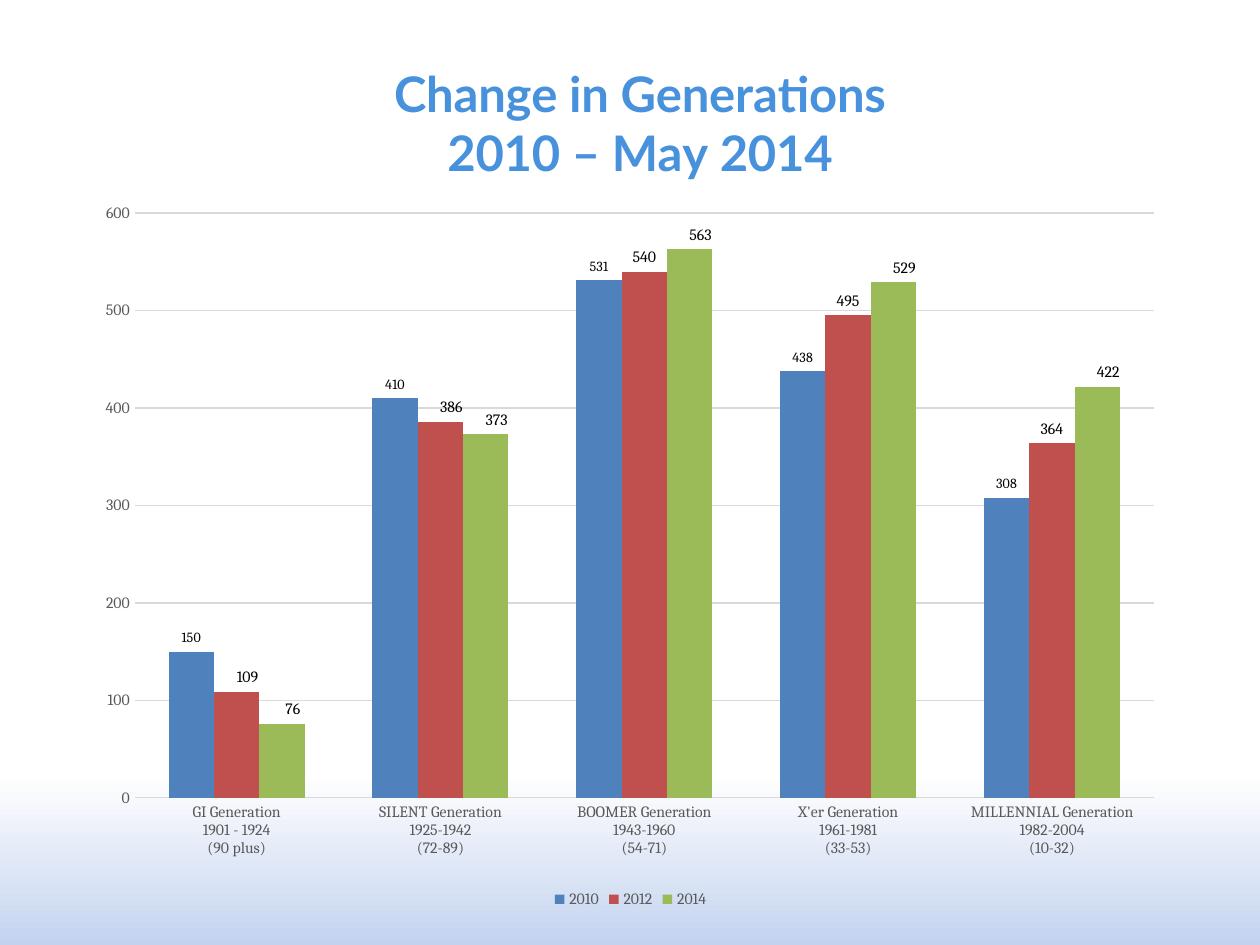
from lxml import etree
from pptx import Presentation
from pptx.chart.data import CategoryChartData
from pptx.dml.color import RGBColor
from pptx.enum.chart import XL_CHART_TYPE, XL_LABEL_POSITION, XL_LEGEND_POSITION, XL_TICK_MARK
from pptx.oxml import parse_xml
from pptx.oxml.ns import qn
from pptx.util import Inches, Pt

COLUMNS = XL_CHART_TYPE.COLUMN_CLUSTERED
BOTTOM = XL_LEGEND_POSITION.BOTTOM
OUTSIDE = XL_LABEL_POSITION.OUTSIDE_END
NO_TICK = XL_TICK_MARK.NONE
CHART_NS = "http://schemas.openxmlformats.org/drawingml/2006/chart"

TITLE = ["Change in Generations", "2010 – May 2014"]
GENERATIONS = [
    "GI Generation\n1901 - 1924\n(90 plus)",
    "SILENT Generation\n1925-1942\n(72-89)",
    "BOOMER Generation\n1943-1960\n(54-71)",
    "X'er Generation\n1961-1981\n(33-53)",
    "MILLENNIAL Generation\n1982-2004\n(10-32)",
]
# name, values, colour, label size, sideways label shifts by point
YEARS = [
    ("2010", [150, 410, 531, 438, 308], "4F81BD", 8, []),
    ("2012", [109, 386, 540, 495, 364], "C0504D", 9, [0.01, 0.01]),
    ("2014", [76, 373, 563, 529, 422], "9BBB59", 9, [0.01, 0.01, 0.01, 0.01, 0.01]),
]


def rgb(color):
    """Return a colour from a hex string."""
    return RGBColor.from_string(color)


def set_font(font, size, color, name="Cambria", bold=False):
    """Set size, colour, face and weight of a font."""
    font.size, font.name, font.bold = Pt(size), name, bold
    font.color.rgb = rgb(color)


def layout_xml(inner=False, edge=True, **lengths):
    """Return a manual chart layout, with lengths as fractions of the chart."""
    tags = '<c:layoutTarget val="inner"/>' if inner else ""
    if edge:
        tags += '<c:xMode val="edge"/><c:yMode val="edge"/>'
    tags += "".join(f'<c:{key} val="{value}"/>' for key, value in lengths.items())
    return parse_xml(
        f'<c:layout xmlns:c="{CHART_NS}"><c:manualLayout>{tags}</c:manualLayout></c:layout>'
    )


def set_background(slide):
    """Fill the background with blue fading upwards to white."""
    fill = slide.background.fill
    fill.gradient()
    fill.gradient_angle = 90
    for stop, (position, color) in zip(fill.gradient_stops, [(0, "C3D3EF"), (0.18, "FFFFFF")]):
        stop.position = position
        stop.color.rgb = rgb(color)
    white = slide.element.xpath(".//p:bgPr//a:gs/a:srgbClr")[-1]
    etree.SubElement(white, qn("a:alpha")).set("val", "67000")


def add_title(chart):
    """Write the two title lines above the columns."""
    tf = chart.chart_title.text_frame
    tf.text = "\n".join(TITLE)
    for p in tf.paragraphs:
        set_font(p.font, 28, "4891DC", "Lato", True)
    title = chart.element.xpath("c:chart/c:title")[0]
    for old in title.findall(qn("c:layout")):
        title.remove(old)
    title.find(qn("c:tx")).addnext(layout_xml(x=0.28, y=0.03))
    chart.chart_title.include_in_layout = False


def format_axis(axis):
    """Give an axis grey labels without line or ticks."""
    axis.major_tick_mark = axis.minor_tick_mark = NO_TICK
    axis.format.line.fill.background()
    set_font(axis.tick_labels.font, 9, "595959")


def format_series(series, color, size, shifts):
    """Colour a series and label its columns."""
    series.format.fill.solid()
    series.format.fill.fore_color.rgb = rgb(color)
    series.invert_if_negative = False
    labels = series.data_labels
    labels.show_value = True
    labels.position = OUTSIDE
    set_font(labels.font, size, "000000")
    for i, _ in enumerate(shifts):
        label = series.points[i].data_label
        set_font(label.font, size, "000000")
        label.position = OUTSIDE


def add_chart(slide):
    """Add the column chart of generations by year."""
    data = CategoryChartData()
    data.categories = GENERATIONS
    for name, values, *_ in YEARS:
        data.add_series(name, values)
    frame = slide.shapes.add_chart(
        COLUMNS, Inches(0.67), Inches(0.25), Inches(8.67), Inches(7), data
    )
    chart = frame.chart
    set_font(chart.font, 10, "000000", "Calibri")
    add_title(chart)

    plot = chart.plots[0]
    plot.gap_width, plot.overlap, plot.vary_by_categories = 150, 0, False
    for i, (_, _, color, size, shifts) in enumerate(YEARS):
        format_series(plot.series[i], color, size, shifts)
        ids = chart.element.xpath(f".//c:ser[{i + 1}]//c:dLbl/c:idx")
        for idx, shift in zip(ids, shifts):
            idx.addnext(layout_xml(edge=False, x=shift, y=0))

    format_axis(chart.category_axis)
    axis = chart.value_axis
    format_axis(axis)
    axis.minimum_scale, axis.maximum_scale, axis.major_unit = 0, 600, 100
    line = axis.major_gridlines.format.line
    line.color.rgb, line.width = rgb("D9D9D9"), Pt(0.75)

    chart.has_legend = True
    chart.legend.position = BOTTOM
    chart.legend.include_in_layout = False
    set_font(chart.legend.font, 9, "595959")

    area = chart.element.xpath(".//c:plotArea")[0]
    for old in area.findall(qn("c:layout")):
        area.remove(old)
    area.insert(0, layout_xml(inner=True, x=0.046, y=0.206, w=0.933, h=0.663))


def main():
    """Build and save the slide."""
    prs = Presentation()
    prs.slide_width, prs.slide_height = Inches(10), Inches(7.5)
    slide = prs.slides.add_slide(prs.slide_layouts[6])
    set_background(slide)
    add_chart(slide)
    prs.save("out.pptx")


if __name__ == "__main__":
    main()
